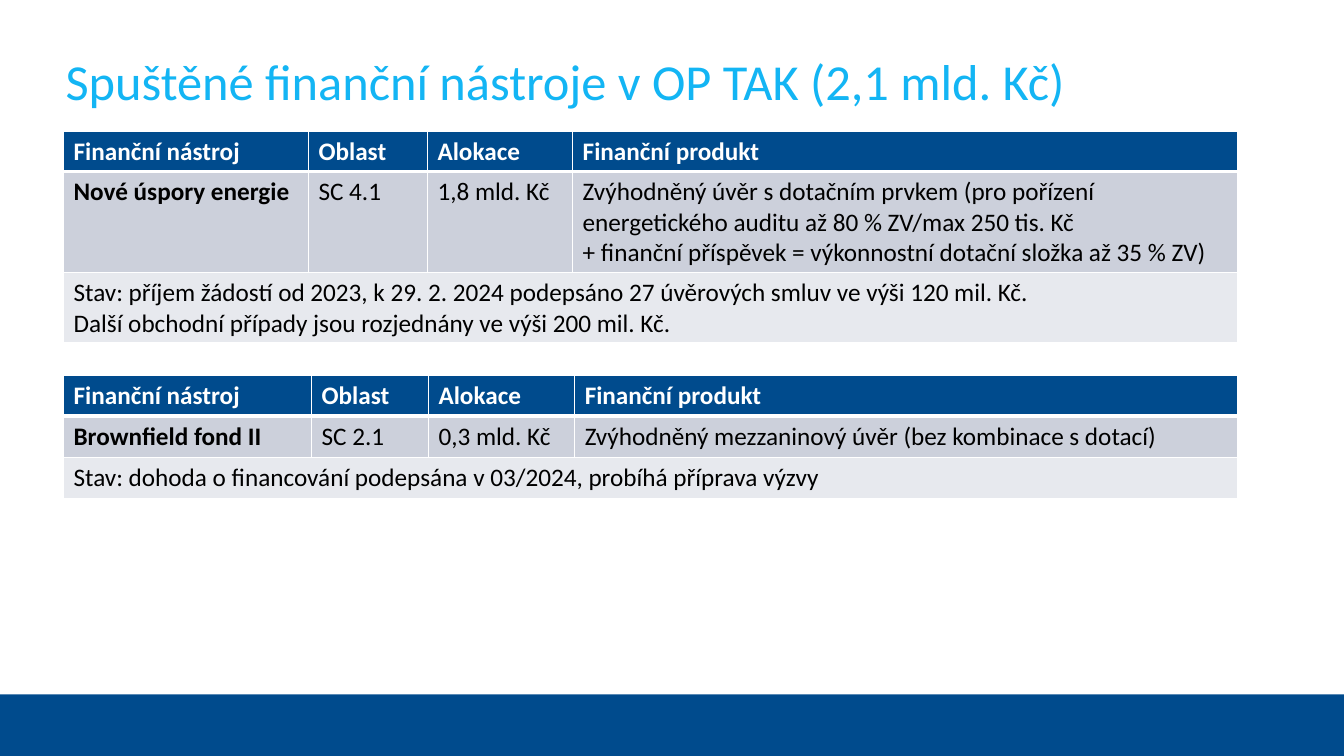
from lxml import etree
from pptx import Presentation
from pptx.dml.color import RGBColor
from pptx.enum import shapes, text
from pptx.oxml import ns
from pptx.util import Inches, Pt

NAVY = RGBColor(0x00, 0x4B, 0x8D)
SKY = RGBColor(0x13, 0xB5, 0xF4)
WHITE = RGBColor(0xFF, 0xFF, 0xFF)
BLACK = RGBColor(0x00, 0x00, 0x00)
DETAIL_GREY = RGBColor(0xCC, 0xD0, 0xDB)
STATUS_GREY = RGBColor(0xE7, 0xE9, 0xEE)

HEADINGS = ["Finanční nástroj", "Oblast", "Alokace", "Finanční produkt"]
FUNDS = [
    {
        "box": (0.63, 1.3, 11.64, 2.06),
        "columns": [2.43, 1.18, 1.44, 6.6],
        "rows": [0.39, 1, 0.67],
        "details": [
            "Nové úspory energie",
            "SC 4.1",
            "1,8 mld. Kč",
            "Zvýhodněný úvěr s dotačním prvkem (pro pořízení energetického "
            "auditu až 80 % ZV/max 250 tis. Kč\n"
            "+ finanční příspěvek = výkonnostní dotační složka až 35 % ZV)",
        ],
        "status": "Stav: příjem žádostí od 2023, k 29. 2. 2024 podepsáno 27 "
                  "úvěrových smluv ve výši 120 mil. Kč.\n"
                  "Další obchodní případy jsou rozjednány ve výši 200 mil. Kč.",
    },
    {
        "box": (0.63, 3.72, 11.64, 1.22),
        "columns": [2.46, 1.16, 1.45, 6.58],
        "rows": [0.41, 0.41, 0.41],
        "details": [
            "Brownfield fond II",
            "SC 2.1",
            "0,3 mld. Kč",
            "Zvýhodněný mezzaninový úvěr (bez kombinace s dotací)",
        ],
        "status": "Stav: dohoda o financování podepsána v 03/2024, "
                  "probíhá příprava výzvy",
    },
]


def write_text(frame, wording, size=18, color=BLACK, bold=False):
    paragraph = frame.paragraphs[0]
    paragraph.text = wording
    for run in paragraph.runs:
        run.font.name = "Calibri"
        run.font.size = Pt(size)
        run.font.bold = bold
        run.font.color.rgb = color


def set_borders(cell, top=1, bottom=1):
    properties = cell._tc.get_or_add_tcPr()
    for side, width in (("L", 1), ("R", 1), ("T", top), ("B", bottom)):
        line = etree.SubElement(properties, ns.qn(f"a:ln{side}"), w=str(Pt(width)))
        fill = etree.SubElement(line, ns.qn("a:solidFill"))
        etree.SubElement(fill, ns.qn("a:srgbClr"), val=str(WHITE))


def add_background(slide, left, top, width, height):
    slide.background.fill.solid()
    slide.background.fill.fore_color.rgb = NAVY
    page = slide.shapes.add_shape(
        shapes.MSO_SHAPE.RECTANGLE,
        Inches(left), Inches(top), Inches(width), Inches(height))
    page.shadow.inherit = False
    page.fill.solid()
    page.fill.fore_color.rgb = WHITE
    page.line.fill.background()


def add_title(slide, wording, left, top, width, height):
    title = slide.shapes.add_textbox(
        Inches(left), Inches(top), Inches(width), Inches(height))
    frame = title.text_frame
    frame.word_wrap = True
    frame.vertical_anchor = text.MSO_ANCHOR.MIDDLE
    frame.margin_left = frame.margin_right = 0
    frame.margin_top = frame.margin_bottom = 0
    write_text(frame, wording, size=36, color=SKY)


def add_fund_table(slide, fund):
    left, top, width, height = fund["box"]
    table = slide.shapes.add_table(
        3, 4, Inches(left), Inches(top), Inches(width), Inches(height)).table
    for column, column_width in zip(table.columns, fund["columns"]):
        column.width = Inches(column_width)
    for row, row_height in zip(table.rows, fund["rows"]):
        row.height = Inches(row_height)

    table.cell(2, 0).merge(table.cell(2, 3))
    contents = [HEADINGS, fund["details"], [fund["status"]]]
    fills = [NAVY, DETAIL_GREY, STATUS_GREY]
    for r, (wordings, fill) in enumerate(zip(contents, fills)):
        for cell in table.rows[r].cells:
            set_borders(cell, top=3 if r == 1 else 1, bottom=3 if r == 0 else 1)
            cell.fill.solid()
            cell.fill.fore_color.rgb = fill
        for c, wording in enumerate(wordings):
            write_text(table.cell(r, c).text_frame, wording,
                       color=WHITE if r == 0 else BLACK,
                       bold=r == 0 or (r == 1 and c == 0))


def main():
    deck = Presentation()
    deck.slide_width = Inches(13.33)
    deck.slide_height = Inches(7.5)
    slide = deck.slides.add_slide(deck.slide_layouts[6])
    add_background(slide, 0, 0, 13.33, 6.89)
    add_title(slide, "Spuštěné finanční nástroje v OP TAK (2,1 mld. Kč)",
              0.65, 0.49, 12.02, 0.61)
    for fund in FUNDS:
        add_fund_table(slide, fund)
    deck.save("out.pptx")


if __name__ == "__main__":
    main()
